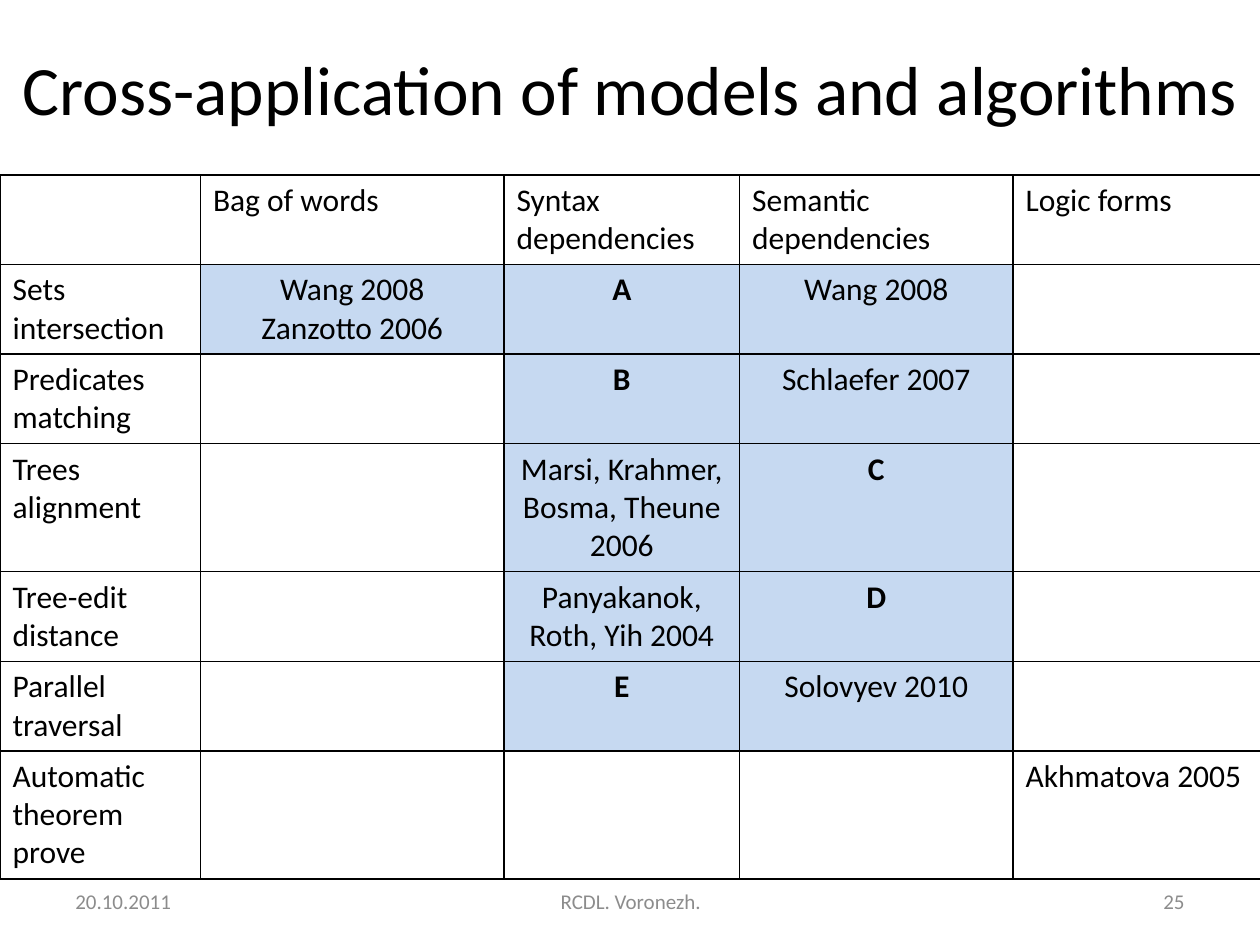
from lxml.etree import SubElement
from pptx import Presentation
from pptx.dml.color import RGBColor
from pptx.enum.text import MSO_ANCHOR, PP_ALIGN
from pptx.oxml import parse_xml
from pptx.oxml.ns import nsdecls
from pptx.util import Cm, Pt

BLACK = RGBColor(0x00, 0x00, 0x00)
GREY = RGBColor(0x8C, 0x8C, 0x8C)
LIGHT_BLUE = RGBColor(0xC6, 0xD9, 0xF1)
FONT = "Calibri"

COLUMN_WIDTHS = [4.04, 6.12, 4.75, 5.51, 5.0]
ROW_HEIGHT = 1.03
TABLE_TOP = 3.53
FOOTER_TOP = 17.65
FOOTER_HEIGHT = 1.02

ROWS = [
    ["", "Bag of words", "Syntax dependencies", "Semantic dependencies", "Logic forms"],
    ["Sets intersection", "Wang 2008\nZanzotto 2006", "A", "Wang 2008", ""],
    ["Predicates matching", "", "B", "Schlaefer 2007", ""],
    ["Trees alignment", "", "Marsi, Krahmer, Bosma, Theune 2006", "C", ""],
    ["Tree-edit distance", "", "Panyakanok, Roth, Yih 2004", "D", ""],
    ["Parallel traversal", "", "E", "Solovyev 2010", ""],
    ["Automatic theorem prove", "", "", "", "Akhmatova 2005 "],
]
LOGIC_COLUMN = 4

# Footer items: text, left, width, alignment
FOOTERS = [
    ("20.10.2011", 1.27, 5.92, PP_ALIGN.LEFT),
    ("25", 18.21, 5.92, PP_ALIGN.RIGHT),
    ("RCDL. Voronezh.", 8.69, 8.05, PP_ALIGN.CENTER),
]


def write_text(paragraph, text, size, color=BLACK, alignment=PP_ALIGN.LEFT, bold=False):
    paragraph.text = text
    paragraph.alignment = alignment
    font = paragraph.font
    font.name, font.size, font.bold = FONT, Pt(size), bold
    font.color.rgb = color


def place_title(slide, text):
    title = slide.shapes.title
    title.left, title.top, title.width, title.height = Cm(0), Cm(0), Cm(25.4), Cm(3.53)
    title.text_frame.vertical_anchor = MSO_ANCHOR.MIDDLE
    write_text(title.text_frame.paragraphs[0], text, 39.6, alignment=PP_ALIGN.CENTER)


def draw_borders(cell):
    properties = cell._tc.get_or_add_tcPr()
    for index, side in enumerate(("lnL", "lnR", "lnT", "lnB")):
        line = parse_xml(
            f'<a:{side} {nsdecls("a")} w="{Pt(1)}"><a:solidFill>'
            f'<a:srgbClr val="{BLACK}"/></a:solidFill></a:{side}>'
        )
        properties.insert(index, line)


def fill_cell(cell, text, row, column):
    is_entry = row > 0 and column > 0
    write_text(
        cell.text_frame.paragraphs[0], text, 18,
        alignment=PP_ALIGN.CENTER if is_entry else PP_ALIGN.LEFT,
        bold=len(text) == 1,
    )
    # Applied combinations are shaded, except for logic forms
    if is_entry and text and column != LOGIC_COLUMN:
        cell.fill.solid()
        cell.fill.fore_color.rgb = LIGHT_BLUE
    else:
        cell.fill.background()
    draw_borders(cell)


def add_matrix(slide):
    frame = slide.shapes.add_table(
        len(ROWS), len(COLUMN_WIDTHS), Cm(0), Cm(TABLE_TOP),
        Cm(sum(COLUMN_WIDTHS)), Cm(ROW_HEIGHT * len(ROWS)),
    )
    table = frame.table
    table.first_row = table.horz_banding = False
    for column, width in zip(table.columns, COLUMN_WIDTHS):
        column.width = Cm(width)
    # Rows grow with their text
    for row, texts in enumerate(ROWS):
        table.rows[row].height = Cm(ROW_HEIGHT)
        for column, text in enumerate(texts):
            fill_cell(table.cell(row, column), text, row, column)


def add_footer(slide, text, left, width, alignment):
    box = slide.shapes.add_textbox(Cm(left), Cm(FOOTER_TOP), Cm(width), Cm(FOOTER_HEIGHT))
    box.text_frame.word_wrap = True
    box.text_frame.vertical_anchor = MSO_ANCHOR.MIDDLE
    write_text(box.text_frame.paragraphs[0], text, 12, GREY, alignment)


def main():
    presentation = Presentation()
    presentation.slide_width, presentation.slide_height = Cm(25.4), Cm(19.05)
    slide = presentation.slides.add_slide(presentation.slide_layouts[5])

    place_title(slide, "Cross-application of models and algorithms")
    add_matrix(slide)
    for footer in FOOTERS:
        add_footer(slide, *footer)

    presentation.save("out.pptx")


if __name__ == "__main__":
    main()
